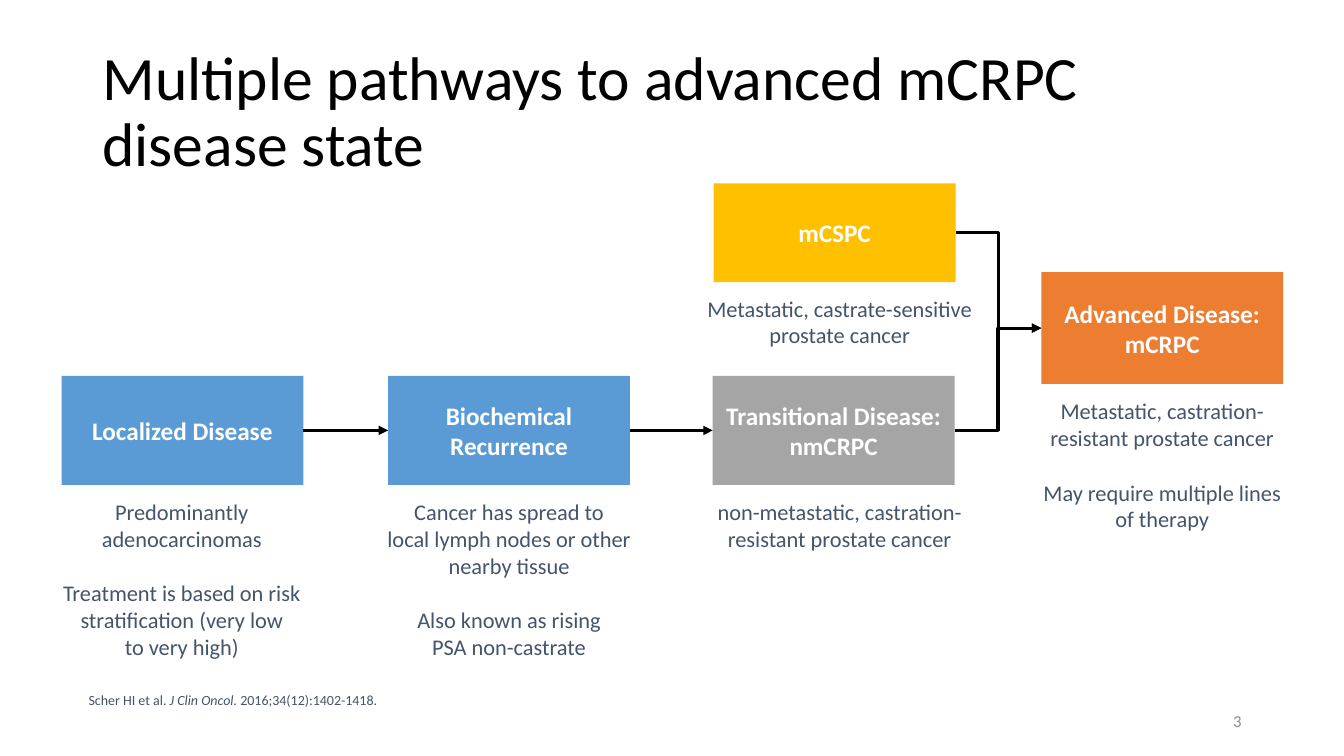
from lxml import etree
from pptx import Presentation
from pptx.dml.color import RGBColor
from pptx.enum.shapes import MSO_CONNECTOR, MSO_SHAPE
from pptx.enum.text import MSO_ANCHOR, PP_ALIGN
from pptx.oxml.ns import qn
from pptx.util import Inches, Pt

RECT, ROUNDED = MSO_SHAPE.RECTANGLE, MSO_SHAPE.ROUNDED_RECTANGLE
STRAIGHT, ELBOW = MSO_CONNECTOR.STRAIGHT, MSO_CONNECTOR.ELBOW
LEFT, CENTER, RIGHT = PP_ALIGN.LEFT, PP_ALIGN.CENTER, PP_ALIGN.RIGHT
TOP, MIDDLE, BOTTOM = MSO_ANCHOR.TOP, MSO_ANCHOR.MIDDLE, MSO_ANCHOR.BOTTOM
LEFT_SITE, RIGHT_SITE = 1, 3

FONT = "Calibri"
BLACK, WHITE, SLATE, GREY = "000000", "FFFFFF", "44546A", "8C8C8C"
BLUE, GOLD, SILVER, ORANGE = "5B9BD5", "FFC000", "A5A5A5", "ED7D31"

SLIDE_W, SLIDE_H = Inches(13.333), Inches(7.5)
STAGE_W, NOTE_W = 18, 22.2  # percent of slide width
NOTE_GAP = 19.5  # points, one line of note text

# name: fill, (left, top, height), (note outdent, note overlap, note height), note
# all lengths are percent of the slide
STAGES = {
    "Localized Disease": (BLUE, (4.58, 49.73, 14.4), (2.15, 4, 28.27), [
        "Predominantly adenocarcinomas",
        "Treatment is based on risk stratification (very low\vto very high)"]),
    "Biochemical Recurrence": (BLUE, (28.88, 49.73, 14.4), (2.1, 4, 28.27), [
        "Cancer has spread to\vlocal lymph nodes or other nearby tissue",
        "Also known as rising\vPSA non-castrate"]),
    "mCSPC": (GOLD, (53.1, 24.27, 13.07), (1.72, 3.47, 13.07), [
        "Metastatic, castrate-sensitive prostate cancer"]),
    "Transitional Disease: nmCRPC": (SILVER, (53.03, 49.73, 14.4), (1.65, 3.33, 13.07), [
        "non-metastatic, castration-resistant prostate cancer"]),
    "Advanced Disease: mCRPC": (ORANGE, (77.48, 36, 14.8), (2.1, 6, 26.67), [
        "Metastatic, castration-resistant prostate cancer",
        "May require multiple lines\vof therapy"]),
}

PATHWAYS = [
    ("Localized Disease", "Biochemical Recurrence", STRAIGHT),
    ("Biochemical Recurrence", "Transitional Disease: nmCRPC", STRAIGHT),
    ("mCSPC", "Advanced Disease: mCRPC", ELBOW),
    ("Transitional Disease: nmCRPC", "Advanced Disease: mCRPC", ELBOW),
]


def rgb(value):
    return RGBColor.from_string(value)


def place(box):
    """Turn a box in percent of the slide into EMU."""
    x, y, w, h = box
    return (round(SLIDE_W * x / 100), round(SLIDE_H * y / 100),
            round(SLIDE_W * w / 100), round(SLIDE_H * h / 100))


def format_run(r, size, color, bold=False, italic=False):
    r.font.name = FONT
    r.font.size = Pt(size)
    r.font.bold = bold
    r.font.italic = italic
    r.font.color.rgb = rgb(color)


def write(sp, lines, size, color, align, anchor, bold=False, gap=0):
    tf = sp.text_frame
    tf.word_wrap = True
    tf.vertical_anchor = anchor
    tf.text = "\n".join(lines)
    for i, p in enumerate(tf.paragraphs):
        p.alignment = align
        if i and gap:
            p.space_before = Pt(gap)
        for r in p.runs:
            format_run(r, size, color, bold)
    return tf


def add_text(slide, box, text, size, color, align=LEFT, anchor=MIDDLE):
    return write(slide.shapes.add_textbox(*place(box)), [text], size, color, align, anchor)


def add_block(slide, kind, box, fill):
    sp = slide.shapes.add_shape(kind, *place(box))
    sp.shadow.inherit = False
    sp.fill.solid()
    sp.fill.fore_color.rgb = rgb(fill)
    sp.line.fill.background()
    return sp


def add_stage(slide, name, fill, box, note_box, note):
    """Draw a stage with its note tucked behind the lower edge."""
    left, top, height = box
    outdent, overlap, note_height = note_box
    card = add_block(slide, ROUNDED,
                     (left - outdent, top + height - overlap, NOTE_W, note_height), WHITE)
    card.adjustments[0] = 0.05
    write(card, note, 16, SLATE, CENTER, BOTTOM, gap=NOTE_GAP)
    sp = add_block(slide, RECT, (left, top, STAGE_W, height), fill)
    write(sp, [name], 18, WHITE, CENTER, MIDDLE, bold=True)
    return sp


def add_arrow(slide, start, end, kind):
    line = slide.shapes.add_connector(kind, 0, 0, 0, 0)
    line.begin_connect(start, RIGHT_SITE)
    line.end_connect(end, LEFT_SITE)
    line.line.width = Pt(2.25)
    line.line.color.rgb = rgb(BLACK)
    etree.SubElement(line.line._get_or_add_ln(), qn("a:tailEnd"), type="triangle")
    etree.SubElement(line._element.spPr, qn("a:effectLst"))


def add_citation(slide, box):
    tf = add_text(slide, box, "Scher HI et al. ", 10, SLATE, anchor=TOP)
    p = tf.paragraphs[0]
    p.line_spacing = 0.9
    for text, italic in (("J Clin Oncol. ", True), ("2016;34(12):1402-1418.", False)):
        r = p.add_run()
        r.text = text
        format_run(r, 10, SLATE, italic=italic)


def build_pathway_slide(prs):
    slide = prs.slides.add_slide(prs.slide_layouts[6])
    title = add_text(slide, (6.88, 5.33, 86.25, 19.33),
                     "Multiple pathways to advanced mCRPC disease state", 44, BLACK)
    title.paragraphs[0].line_spacing = 0.9
    add_text(slide, (70.63, 92.67, 22.5, 5.33), "3", 12, GREY, RIGHT)
    stages = {name: add_stage(slide, name, *parts) for name, parts in STAGES.items()}
    for start, end, kind in PATHWAYS:
        add_arrow(slide, stages[start], stages[end], kind)
    add_citation(slide, (5.85, 91.07, 84.2, 3.6))


def main():
    prs = Presentation()
    prs.slide_width, prs.slide_height = SLIDE_W, SLIDE_H
    build_pathway_slide(prs)
    prs.save("out.pptx")


if __name__ == "__main__":
    main()
